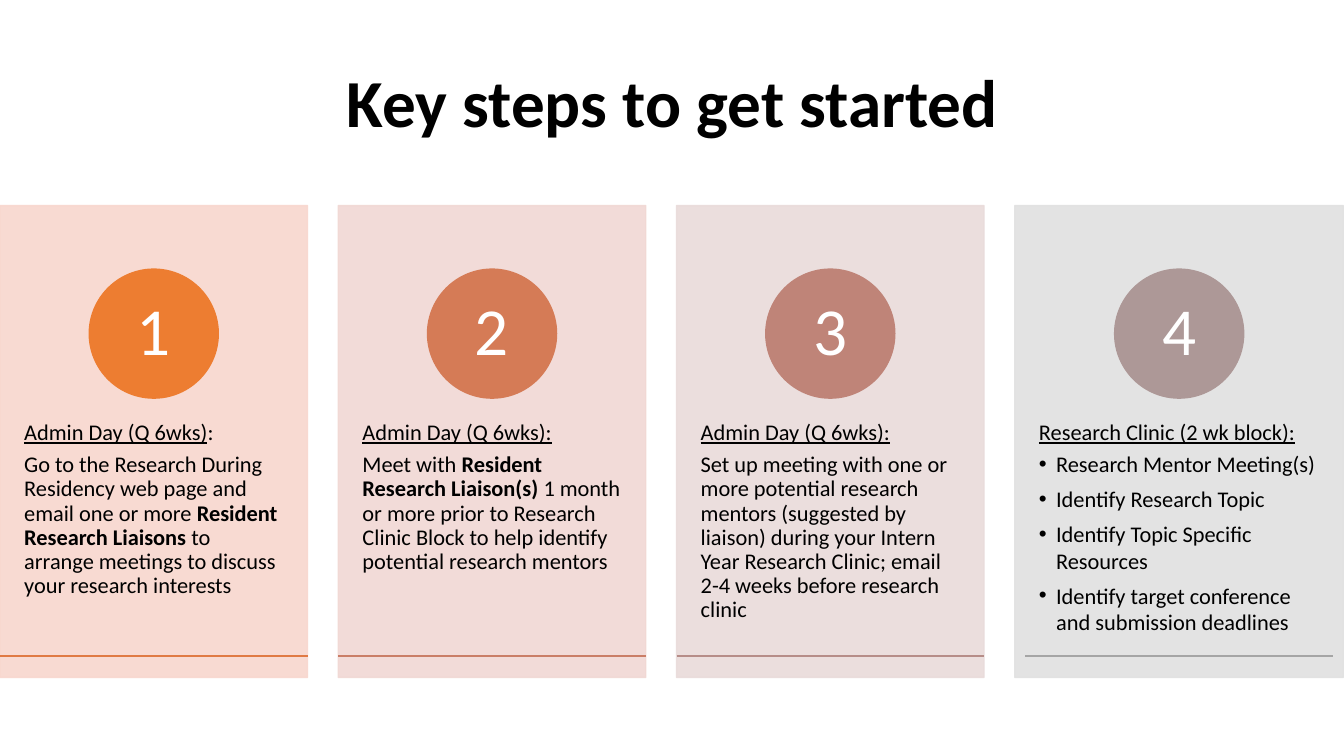
from dataclasses import dataclass

from lxml.etree import SubElement
from pptx import Presentation
from pptx.dml.color import RGBColor
from pptx.enum.shapes import MSO_CONNECTOR, MSO_SHAPE
from pptx.enum.text import MSO_ANCHOR, PP_ALIGN
from pptx.oxml.ns import qn
from pptx.util import Inches, Pt

FONT = "Calibri"
PANEL_PITCH = 3.355
PANEL_TOP, PANEL_HEIGHT = 2.04, 4.68
PANEL_WIDTH, LAST_PANEL_WIDTH = 3.05, 3.26
CIRCLE_TOP, CIRCLE_SIZE = 2.67, 1.28
RULE_TOP = 6.51
BULLET_INDENT = 0.17


@dataclass
class Step:
    panel_color: str
    circle_color: str
    rule_color: str
    heading: list
    body: list
    bullets: tuple = ()
    width: float = PANEL_WIDTH


STEPS = [
    Step("F8D7CE", "ED7D31", "E07A44",
         [("Admin Day (Q 6wks)", "u"), (":", "")],
         [("Go to the Research During Residency web page and email one or more ", ""),
          ("Resident Research Liaisons ", "b"),
          ("to arrange meetings to discuss your research interests", "")]),
    Step("F1D8D4", "D57B56", "CA7E67",
         [("Admin Day (Q 6wks):", "u")],
         [("Meet with ", ""),
          ("Resident Research Liaison(s) ", "b"),
          ("1 month or more prior to Research Clinic Block to help identify "
           "potential research mentors", "")]),
    Step("E9DBDA", "BF8478", "B68D88",
         [("Admin Day (Q 6wks):", "u")],
         [("Set up meeting with one or more potential research mentors (suggested by "
           "liaison) during your Intern Year Research Clinic; email 2-4 weeks before "
           "research clinic", "")]),
    Step("E1E1E1", "AD9897", "A5A5A5",
         [("Research Clinic (2 wk block):", "u")],
         [],
         ("Research Mentor Meeting(s)", "Identify Research Topic",
          "Identify Topic Specific Resources",
          "Identify target conference and submission deadlines"),
         LAST_PANEL_WIDTH),
]


def rgb(value):
    return RGBColor.from_string(value)


def style_span(span, size, color="000000", bold=False, underline=False):
    span.font.name = FONT
    span.font.size = Pt(size)
    span.font.color.rgb = rgb(color)
    span.font.bold = bold
    span.font.underline = underline


def set_margins(frame, horizontal, vertical):
    frame.margin_left = frame.margin_right = Inches(horizontal)
    frame.margin_top = frame.margin_bottom = Inches(vertical)


def add_text_box(slide, left, top, width, height):
    box = slide.shapes.add_textbox(Inches(left), Inches(top), Inches(width), Inches(height))
    box.text_frame.word_wrap = True
    return box.text_frame


def add_filled_shape(slide, kind, left, top, width, height, color):
    shape = slide.shapes.add_shape(
        kind, Inches(left), Inches(top), Inches(width), Inches(height))
    shape.shadow.inherit = False
    shape.fill.solid()
    shape.fill.fore_color.rgb = rgb(color)
    shape.line.color.rgb = rgb(color)
    shape.line.width = Pt(1)
    return shape


def set_opacity(shape, percent):
    for color in shape.element.spPr.iter(qn("a:srgbClr")):
        SubElement(color, qn("a:alpha"), val=str(percent * 1000))


def add_centred_text(frame, text, size, color, bold=False):
    frame.vertical_anchor = MSO_ANCHOR.MIDDLE
    frame.text = text
    para = frame.paragraphs[0]
    para.alignment = PP_ALIGN.CENTER
    para.line_spacing = 0.9
    style_span(para.runs[0], size, color, bold)


def add_circle(slide, left, number, color):
    circle = add_filled_shape(
        slide, MSO_SHAPE.OVAL, left, CIRCLE_TOP, CIRCLE_SIZE, CIRCLE_SIZE, color)
    set_margins(circle.text_frame, 0.1, 0.01)
    add_centred_text(circle.text_frame, str(number), 48, "FFFFFF")


def add_rule(slide, left, width, color):
    rule = slide.shapes.add_connector(
        MSO_CONNECTOR.STRAIGHT, Inches(left), Inches(RULE_TOP),
        Inches(left + width), Inches(RULE_TOP))
    rule.line.color.rgb = rgb(color)
    rule.line.width = Pt(1)
    SubElement(rule.element.spPr, qn("a:effectLst"))


def fill_para(para, parts, line_spacing=0.9):
    para.line_spacing = line_spacing
    para.space_after = Pt(5.6)
    for text, mark in parts:
        span = para.add_run()
        span.text = text
        style_span(span, 16, bold=mark == "b", underline=mark == "u")


def add_bullet(para):
    properties = para._p.get_or_add_pPr()
    properties.set("marL", str(Inches(BULLET_INDENT)))
    properties.set("indent", str(-Inches(BULLET_INDENT)))
    SubElement(properties, qn("a:buFont"), typeface="Arial")
    SubElement(properties, qn("a:buChar"), char="•")


def add_step_text(slide, left, step):
    frame = add_text_box(slide, left, 3.82, step.width, 2.81)
    set_margins(frame, 0.24, 0.36)
    fill_para(frame.paragraphs[0], step.heading)
    if step.body:
        fill_para(frame.add_paragraph(), step.body)
    for index, text in enumerate(step.bullets):
        para = frame.add_paragraph()
        fill_para(para, [(text, "")], 1.0 if index else 0.9)
        add_bullet(para)


def add_step(slide, number, step):
    left = (number - 1) * PANEL_PITCH
    panel = add_filled_shape(
        slide, MSO_SHAPE.RECTANGLE, left, PANEL_TOP, step.width, PANEL_HEIGHT,
        step.panel_color)
    set_opacity(panel, 90)
    add_step_text(slide, left, step)
    add_circle(slide, left + (step.width - CIRCLE_SIZE) / 2, number, step.circle_color)
    add_rule(slide, left + (step.width - PANEL_WIDTH) / 2, PANEL_WIDTH, step.rule_color)


def main():
    deck = Presentation()
    deck.slide_width = Inches(13.33)
    deck.slide_height = Inches(7.5)
    slide = deck.slides.add_slide(deck.slide_layouts[6])
    title = add_text_box(slide, 0.92, 0.5, 11.5, 1.1)
    add_centred_text(title, "Key steps to get started", 48, "000000", bold=True)
    for number, step in enumerate(STEPS, 1):
        add_step(slide, number, step)
    deck.save("out.pptx")


if __name__ == "__main__":
    main()
